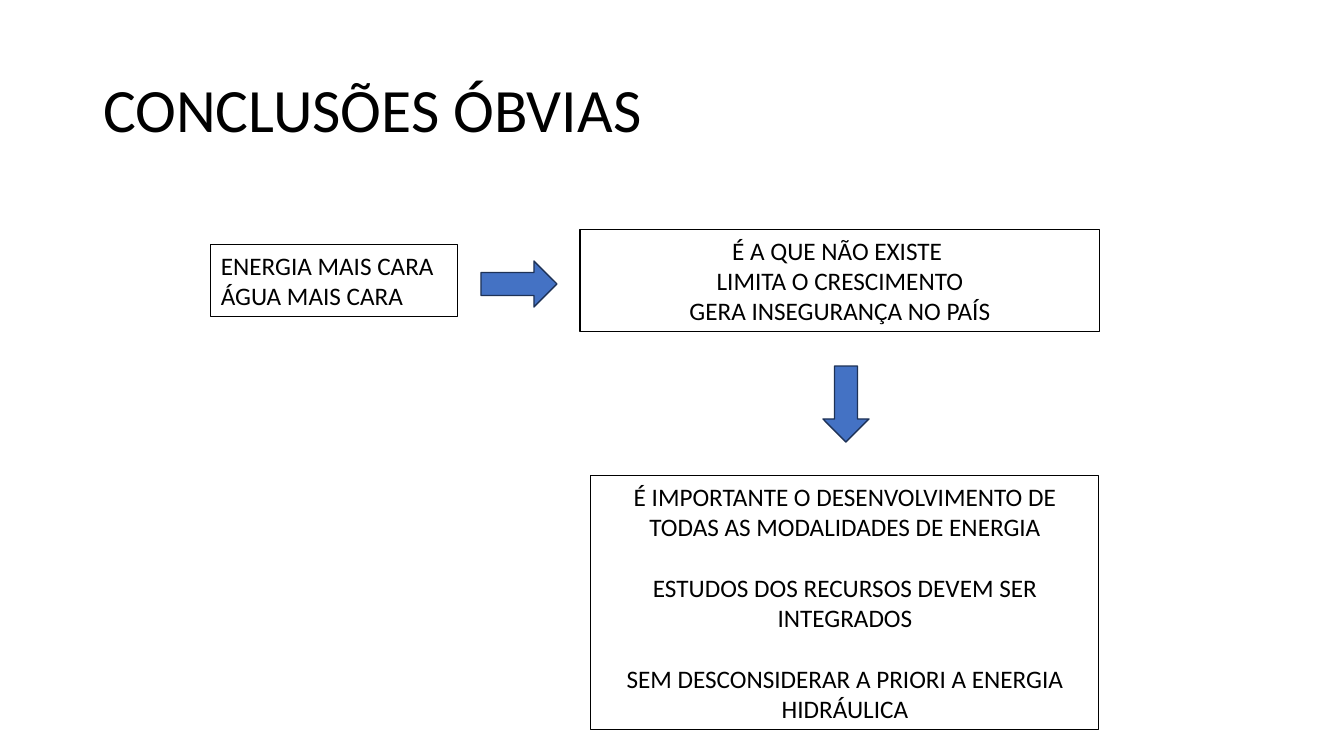
from pptx import Presentation, util as u
from pptx.dml.color import RGBColor
from pptx.enum import shapes, text

PX = 914400 / 100.8
BLACK = RGBColor(0, 0, 0)
BLUE = RGBColor(0x44, 0x72, 0xC4)
NAVY = RGBColor(0x1E, 0x32, 0x56)
LEFT, MID = text.PP_ALIGN.LEFT, text.PP_ALIGN.CENTER
KIND = shapes.MSO_SHAPE


def px(*vals):
    return [round(v * PX) for v in vals]


def style(obj, **vals):
    for key, val in vals.items():
        setattr(obj, key, val)


def edge(shape, color, width):
    shape.line.color.rgb = color
    shape.line.width = u.Pt(width)


def write(para, words, size, **form):
    para.text = words
    style(para.font, name="Calibri", size=u.Pt(size))
    para.font.color.rgb = BLACK
    style(para, **form)


def head(slide, box, words):
    title = slide.shapes.title
    style(title, **dict(zip(("left", "top", "width", "height"), px(*box))))
    style(title.text_frame, vertical_anchor=text.MSO_ANCHOR.MIDDLE,
          word_wrap=True, auto_size=text.MSO_AUTO_SIZE.NONE)
    write(title.text_frame.paragraphs[0], words, 44,
          alignment=LEFT, line_spacing=0.9)


def panel(slide, box, lines, align=MID, gap=0):
    shape = slide.shapes.add_textbox(*px(*box))
    edge(shape, BLACK, 0.75)
    frame = shape.text_frame
    style(frame, word_wrap=True,
          auto_size=text.MSO_AUTO_SIZE.SHAPE_TO_FIT_TEXT)
    for i, words in enumerate(lines):
        para = frame.add_paragraph() if i else frame.paragraphs[0]
        write(para, words, 18, alignment=align)
        if i and gap:
            para.space_before = u.Pt(gap)


def arrow(slide, kind, box):
    shape = slide.shapes.add_shape(kind, *px(*box))
    shape.shadow.inherit = False
    shape.fill.solid()
    shape.fill.fore_color.rgb = BLUE
    edge(shape, NAVY, 1)


def flow(slide, x, y):
    # Cause and its effects
    panel(slide, (x, y + 15, 247, 72),
          ["ENERGIA MAIS CARA", "ÁGUA MAIS CARA"], LEFT)
    arrow(slide, KIND.RIGHT_ARROW, (x + 270, y + 31, 76, 46))
    panel(slide, (x + 369, y, 520, 102),
          ["É A QUE NÃO EXISTE ", "LIMITA O CRESCIMENTO",
           "GERA INSEGURANÇA NO PAÍS"])
    # What follows from them
    arrow(slide, KIND.DOWN_ARROW, (x + 612, y + 136, 46, 76))
    panel(slide, (x + 380, y + 246, 508, 254),
          ["É IMPORTANTE O DESENVOLVIMENTO DE TODAS AS MODALIDADES DE ENERGIA",
           "ESTUDOS DOS RECURSOS DEVEM SER INTEGRADOS",
           "SEM DESCONSIDERAR A PRIORI A ENERGIA HIDRÁULICA"], gap=22)


def main():
    deck = Presentation()
    deck.slide_width, deck.slide_height = px(1344, 756)
    slide = deck.slides.add_slide(deck.slide_layouts[5])
    head(slide, (93, 40, 1159, 146), "CONCLUSÕES ÓBVIAS")
    flow(slide, 211, 230)
    deck.save("out.pptx")


if __name__ == "__main__":
    main()
